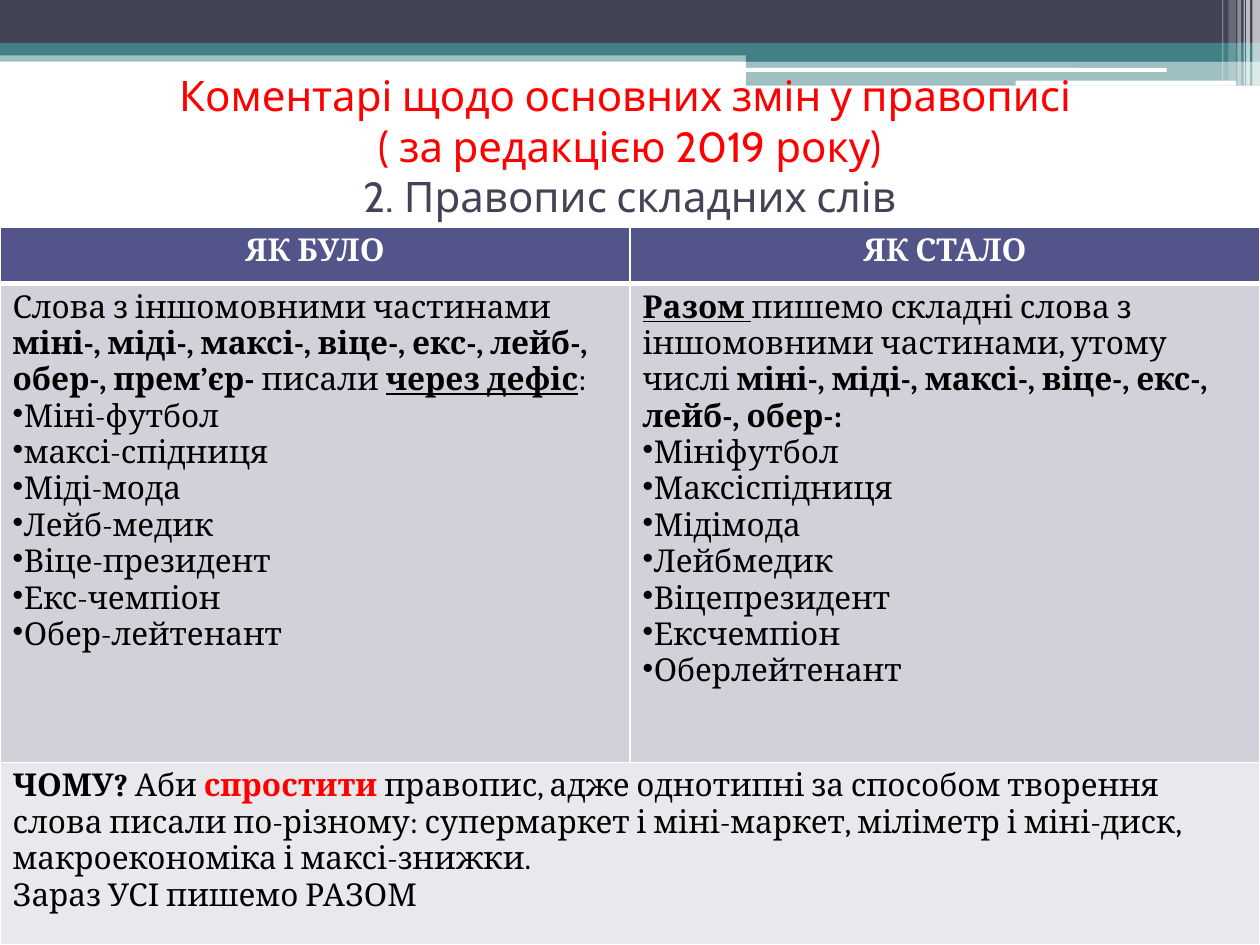
from lxml import etree
from pptx import Presentation
from pptx.dml.color import RGBColor
from pptx.enum.shapes import MSO_SHAPE
from pptx.enum.text import MSO_ANCHOR, MSO_AUTO_SIZE, PP_ALIGN
from pptx.oxml.ns import qn
from pptx.util import Inches, Pt

RECTANGLE = MSO_SHAPE.RECTANGLE
ROUNDED = MSO_SHAPE.ROUNDED_RECTANGLE
CENTER = PP_ALIGN.CENTER
LEFT = PP_ALIGN.LEFT
MIDDLE = MSO_ANCHOR.MIDDLE
NO_AUTOFIT = MSO_AUTO_SIZE.NONE

COLORS = {
    "white": "FFFFFF", "black": "000000", "red": "FF0000",
    "slate": "424456", "teal": "438086", "header": "53548A",
    "body": "D1D1DA", "reason": "E9E9ED",
}
TITLE_SIZE = 24

BANDS = [
    (RECTANGLE, 0, 0.4, 10, 0.09, "teal", 50),
    (RECTANGLE, 0, 0, 10, 0.34, "slate", 100),
    (RECTANGLE, 0, 0.34, 10, 0.1, "teal", 100),
    (RECTANGLE, 5.92, 0.39, 4.08, 0.1, "teal", 100),
    (RECTANGLE, 5.92, 0.48, 4.08, 0.2, "teal", 50),
    (ROUNDED, 5.91, 0.54, 3.35, 0.03, "white", 100),
    (ROUNDED, 8.06, 0.64, 1.75, 0.04, "white", 100),
]
STRIPES = [
    (9.94, 0.06, 0.68, 65), (9.89, 0.03, 0.68, 65), (9.87, 0.01, 0.68, 60),
    (9.82, 0.03, 0.68, 40), (9.75, 0.06, 0.64, 20), (9.7, 0.01, 0.64, 30),
]

OLD_RULE = [
    ("Слова з іншомовними частинами ", ""),
    ("міні-, міді-, максі-, віце-, екс-, лейб-, обер-, прем’єр- ", "b"),
    ("писали ", ""), ("через дефіс", "bu"), (":", ""),
]
OLD_WORDS = ["Міні-футбол", "максі-спідниця", "Міді-мода", "Лейб-медик",
             "Віце-президент", "Екс-чемпіон", "Обер-лейтенант"]
NEW_RULE = [
    ("Разом ", "bu"),
    ("пишемо складні слова з іншомовними частинами, утому числі ", ""),
    ("міні-, міді-, максі-, віце-, екс-, лейб-, обер-:", "b"),
]
NEW_WORDS = ["Мініфутбол", "Максіспідниця", "Мідімода", "Лейбмедик",
             "Віцепрезидент", "Ексчемпіон", "Оберлейтенант"]
REASON = [
    ("ЧОМУ? ", "b"), ("Аби ", ""), ("спростити ", "br"),
    ("правопис, адже однотипні за способом творення слова писали по-різному: "
     "супермаркет і міні-маркет, міліметр і міні-диск, макроекономіка "
     "і максі-знижки.", ""),
]
CONCLUSION = [("Зараз УСІ пишемо РАЗОМ", "")]


def rgb(name):
    """Return the named colour."""
    return RGBColor.from_string(COLORS[name])


def add_band(slide, kind, left, top, width, height, color, opacity):
    """Add one plain band with the given opacity in percent."""
    shape = slide.shapes.add_shape(
        kind, Inches(left), Inches(top), Inches(width), Inches(height))
    shape.shadow.inherit = False
    shape.fill.solid()
    shape.fill.fore_color.rgb = rgb(color)
    shape.line.fill.background()
    if opacity < 100:
        value = shape.fill._xPr.find(f".//{qn('a:srgbClr')}")
        etree.SubElement(value, qn("a:alpha"), val=str(opacity * 1000))


def add_header_bands(slide):
    """Draw the bands across the top and the stripes at the right edge."""
    for band in BANDS:
        add_band(slide, *band)
    for left, width, height, opacity in STRIPES:
        add_band(slide, RECTANGLE, left, 0, width, height, "white", opacity)


def place_title(slide, left, top, width, height):
    """Place the three-line title in front of the bands."""
    title = slide.shapes.title
    slide.shapes._spTree.append(title._element)
    title.left, title.top = Inches(left), Inches(top)
    title.width, title.height = Inches(width), Inches(height)
    frame = title.text_frame
    frame.text = ("Коментарі щодо основних змін у правописі \v"
                  "( за редакцією 2019 року)\v2. Правопис складних слів")
    frame.auto_size = NO_AUTOFIT
    frame.vertical_anchor = MIDDLE
    paragraph = frame.paragraphs[0]
    paragraph.alignment = CENTER
    for line_break in paragraph._p.findall(qn("a:br")):
        etree.SubElement(line_break, qn("a:rPr"), sz=str(TITLE_SIZE * 100))
    for run, color in zip(paragraph.runs, ("red", "red", "slate")):
        run.font.name = "Cabin"
        run.font.size = Pt(TITLE_SIZE)
        run.font.color.rgb = rgb(color)


def add_bullet(paragraph):
    """Give the paragraph a bullet that sits right before its text."""
    properties = paragraph._p.get_or_add_pPr()
    properties.set("marL", "0")
    properties.set("indent", "0")
    etree.SubElement(properties, qn("a:buChar"), char="•")


def set_borders(cell, bottom_width):
    """Draw white borders around the cell."""
    properties = cell._tc.get_or_add_tcPr()
    widths = (("L", 1), ("R", 1), ("T", 1), ("B", bottom_width))
    for position, (side, width) in enumerate(widths):
        line = etree.Element(qn(f"a:ln{side}"), w=str(Pt(width)))
        fill = etree.SubElement(line, qn("a:solidFill"))
        etree.SubElement(fill, qn("a:srgbClr"), val=COLORS["white"])
        properties.insert(position, line)


def fill_cell(cell, paragraphs, fill, color="black", alignment=LEFT, bottom=1):
    """Write paragraphs of (text, style) runs; a plain string is a bullet."""
    cell.fill.solid()
    cell.fill.fore_color.rgb = rgb(fill)
    set_borders(cell, bottom)
    frame = cell.text_frame
    for index, content in enumerate(paragraphs):
        paragraph = frame.add_paragraph() if index else frame.paragraphs[0]
        paragraph.alignment = alignment
        if isinstance(content, str):
            add_bullet(paragraph)
            content = [(content, "")]
        for text, style in content:
            run = paragraph.add_run()
            run.text = text
            run.font.name = "Cambria"
            run.font.size = Pt(18)
            run.font.bold = "b" in style
            run.font.underline = "u" in style
            run.font.color.rgb = rgb("red" if "r" in style else color)


def add_comparison_table(slide, left, top, width, row_heights):
    """Add the table of old and new spelling with the reason below."""
    table = slide.shapes.add_table(
        len(row_heights), 2, Inches(left), Inches(top),
        Inches(width), Inches(sum(row_heights))).table
    for row, height in zip(table.rows, row_heights):
        row.height = Inches(height)
    for column, heading in enumerate(("ЯК БУЛО", "ЯК СТАЛО")):
        fill_cell(table.cell(0, column), [[(heading, "b")]], "header",
                  "white", CENTER, bottom=3)
    fill_cell(table.cell(1, 0), [OLD_RULE, *OLD_WORDS], "body")
    fill_cell(table.cell(1, 1), [NEW_RULE, *NEW_WORDS], "body")
    table.cell(2, 0).merge(table.cell(2, 1))
    fill_cell(table.cell(2, 0), [REASON, CONCLUSION], "reason")


def main():
    """Build and save the slide."""
    presentation = Presentation()
    presentation.slide_width = Inches(10)
    presentation.slide_height = Inches(7.5)
    slide = presentation.slides.add_slide(presentation.slide_layouts[5])
    add_header_bands(slide)
    place_title(slide, 0.5, 0.76, 9, 0.79)
    add_comparison_table(slide, 0, 1.8, 10, (0.45, 3.8, 1.45))
    presentation.save("out.pptx")


if __name__ == "__main__":
    main()
